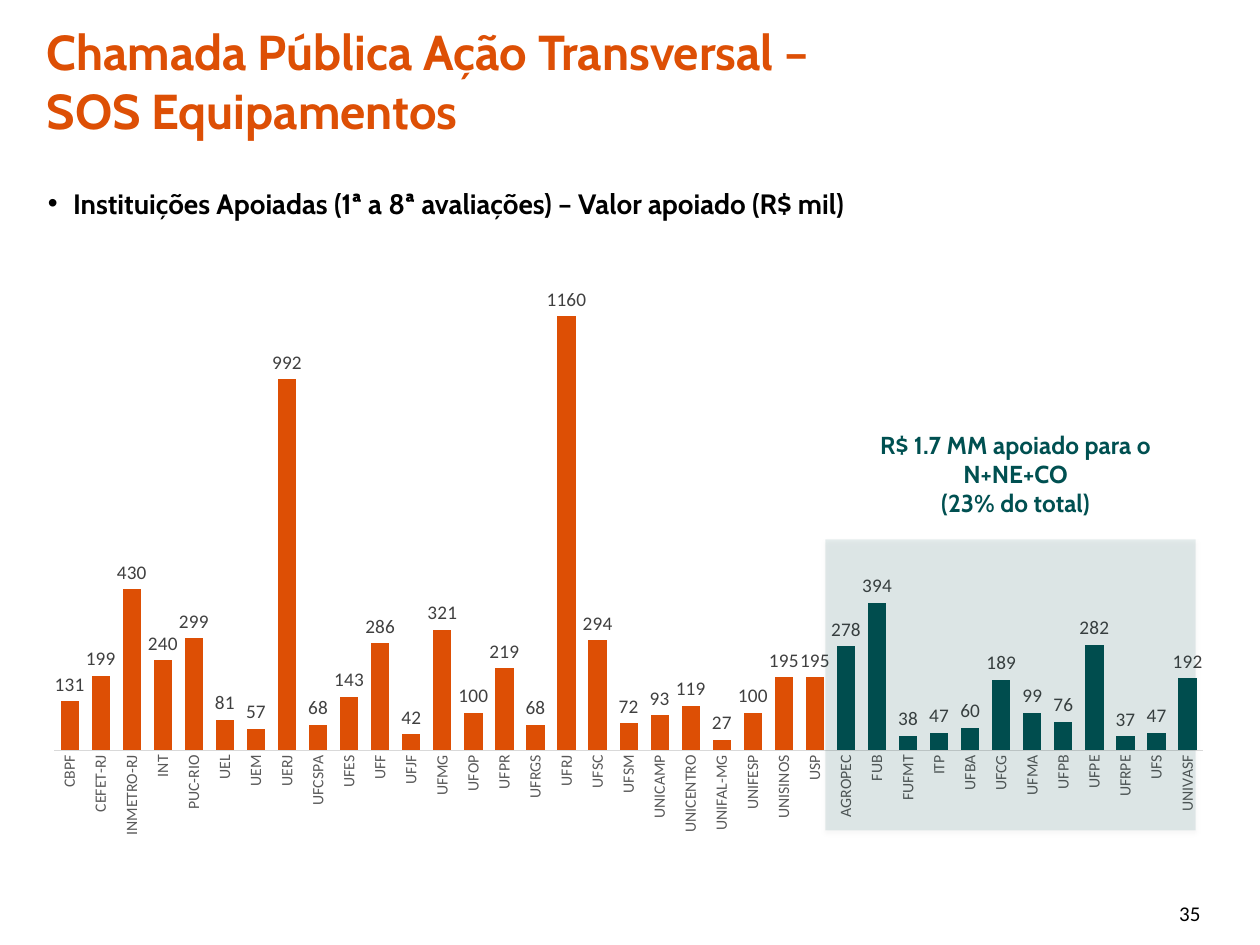
from lxml.etree import SubElement
from pptx import Presentation
from pptx.chart.data import CategoryChartData
from pptx.dml.color import RGBColor
from pptx.enum.chart import XL_CHART_TYPE as ChartType, XL_LABEL_POSITION as LabelPos, XL_TICK_MARK as Tick
from pptx.enum.shapes import MSO_SHAPE as Shape
from pptx.enum.text import MSO_ANCHOR as Anchor, MSO_AUTO_SIZE as AutoSize, PP_ALIGN as Align
from pptx.oxml import parse_xml
from pptx.oxml.ns import nsdecls, qn
from pptx.util import Inches, Pt

ORANGE, TEAL, BLACK = "DD4F05", "005051", "000000"
HEADING, PLAIN = "Cabin", "Calibri"
COLUMNS, ROWS = 100, 75

SOUTH_SOUTHEAST = {
    "CBPF": 131, "CEFET-RJ": 199, "INMETRO-RJ": 430, "INT": 240, "PUC-RIO": 299,
    "UEL": 81, "UEM": 57, "UERJ": 992, "UFCSPA": 68, "UFES": 143, "UFF": 286,
    "UFJF": 42, "UFMG": 321, "UFOP": 100, "UFPR": 219, "UFRGS": 68, "UFRJ": 1160,
    "UFSC": 294, "UFSM": 72, "UNICAMP": 93, "UNICENTRO": 119, "UNIFAL-MG": 27,
    "UNIFESP": 100, "UNISINOS": 195, "USP": 195,
}
OTHER_REGIONS = {
    "AGROPEC": 278, "FUB": 394, "FUFMT": 38, "ITP": 47, "UFBA": 60, "UFCG": 189,
    "UFMA": 99, "UFPB": 76, "UFPE": 282, "UFRPE": 37, "UFS": 47, "UNIVASF": 192,
}


def rgb(hex_code):
    """Turn a hex string into a colour."""
    return RGBColor.from_string(hex_code)


def style_font(font, size, color, name=PLAIN, bold=False):
    """Apply size, colour, typeface and weight to a font."""
    font.size, font.name, font.bold = Pt(size), name, bold
    font.color.rgb = rgb(color)


class SlideBuilder:
    """Holds the deck, the current slide and its grid."""

    def __init__(self):
        """Start a deck with one title and content slide."""
        self.deck = Presentation()
        self.deck.slide_width, self.deck.slide_height = Inches(10), Inches(7.5)
        self.slide = self.deck.slides.add_slide(self.deck.slide_layouts[1])

    def area(self, left, top, width, height):
        """Convert grid columns and rows to lengths."""
        column, row = self.deck.slide_width / COLUMNS, self.deck.slide_height / ROWS
        return [int(n) for n in (left * column, top * row, width * column, height * row)]

    def move(self, holder, box):
        """Move a placeholder to a grid area."""
        holder.left, holder.top, holder.width, holder.height = self.area(*box)
        holder.text_frame.auto_size = AutoSize.NONE

    def add_text_run(self, paragraph, text, align, *style):
        """Add one styled run to an aligned paragraph."""
        paragraph.alignment = align
        run = paragraph.add_run()
        run.text = text
        style_font(run.font, *style)

    def title(self, box, lines):
        """Fill the title placeholder, one run per line."""
        heading = self.slide.shapes.title
        self.move(heading, box)
        heading.text_frame.vertical_anchor = Anchor.MIDDLE
        paragraph = heading.text_frame.paragraphs[0]
        for number, line in enumerate(lines):
            if number:
                paragraph.add_line_break()
            self.add_text_run(paragraph, line, Align.LEFT, 28, ORANGE, HEADING, True)

    def bullet(self, box, text):
        """Fill the body placeholder with one bulleted line."""
        body = self.slide.placeholders[1]
        self.move(body, box)
        paragraph = body.text_frame.paragraphs[0]
        props = paragraph._p.get_or_add_pPr()
        props.set("marL", str(Inches(0.2)))
        props.set("indent", str(-Inches(0.2)))
        SubElement(props, qn("a:buChar"), char="•")
        paragraph.line_spacing, paragraph.space_before = Pt(30), Pt(0)
        self.add_text_run(paragraph, text, Align.JUSTIFY, 16, BLACK, HEADING, True)

    def text(self, box, lines, align, *style, wrap=True):
        """Add a text box with one paragraph per line."""
        frame = self.slide.shapes.add_textbox(*self.area(*box)).text_frame
        frame.word_wrap = wrap
        for number, line in enumerate(lines):
            paragraph = frame.add_paragraph() if number else frame.paragraphs[0]
            self.add_text_run(paragraph, line, align, *style)

    def column_chart(self, box, groups):
        """Add a column chart of thousands, each group in its own colour."""
        data = CategoryChartData()
        bars = [(name, value, color) for color, group in groups for name, value in group.items()]
        data.categories = [name for name, _, _ in bars]
        data.add_series("Valor apoiado", [value * 1000 for _, value, _ in bars])
        chart = self.slide.shapes.add_chart(ChartType.COLUMN_CLUSTERED, *self.area(*box), data).chart
        chart.has_legend = chart.has_title = False
        style_font(chart.font, 10, BLACK)
        plot = chart.plots[0]
        plot.gap_width, plot.vary_by_categories = 70, False
        series = plot.series[0]
        series.format.fill.solid()
        series.format.fill.fore_color.rgb = rgb(groups[0][0])
        for index, (_, _, color) in enumerate(bars):
            if color != groups[0][0]:
                fill = series.points[index].format.fill
                fill.solid()
                fill.fore_color.rgb = rgb(color)
        labels = series.data_labels
        labels.show_value, labels.position = True, LabelPos.OUTSIDE_END
        labels.number_format, labels.number_format_is_linked = "#,", False
        style_font(labels.font, 11, "404040")
        self.axes(chart)
        self.plot_area(chart, x=0.017, y=0, w=0.967, h=0.781)

    def axes(self, chart):
        """Hide the value axis and turn the category names upright."""
        values, names = chart.value_axis, chart.category_axis
        values.visible = values.has_major_gridlines = False
        values.minimum_scale, values.maximum_scale = 0, 1400000
        names.major_tick_mark = names.minor_tick_mark = Tick.NONE
        style_font(names.tick_labels.font, 9, "595959")
        names.format.line.color.rgb = rgb("D9D9D9")
        names.format.line.width = Pt(0.75)
        names._element.find(qn("c:txPr")).find(qn("a:bodyPr")).set("rot", "-5400000")

    def plot_area(self, chart, **shares):
        """Fix the inner plot area as shares of the chart."""
        area = chart._chartSpace.chart.plotArea
        for old in area.findall(qn("c:layout")):
            area.remove(old)
        layout = parse_xml(f"<c:layout {nsdecls('c')}><c:manualLayout/></c:layout>")
        SubElement(layout[0], qn("c:layoutTarget"), val="inner")
        for side in "xy":
            SubElement(layout[0], qn(f"c:{side}Mode"), val="edge")
        for side, share in shares.items():
            SubElement(layout[0], qn(f"c:{side}"), val=str(share))
        area.insert(0, layout)

    def highlight(self, box, color, opacity):
        """Add a translucent rectangle with a soft shadow below."""
        panel = self.slide.shapes.add_shape(Shape.RECTANGLE, *self.area(*box))
        panel.fill.solid()
        panel.fill.fore_color.rgb = rgb(color)
        panel.line.fill.background()
        panel.shadow.inherit = False
        props = panel._element.spPr
        tint = props.find(qn("a:solidFill"))[0]
        SubElement(tint, qn("a:alpha"), val=str(opacity * 1000))
        shadow = SubElement(props.find(qn("a:effectLst")), qn("a:outerShdw"), blurRad=str(Pt(3.1)),
                            dist=str(Pt(1.8)), dir="5400000", rotWithShape="0")
        shade = SubElement(shadow, qn("a:srgbClr"), val=BLACK)
        SubElement(shade, qn("a:alpha"), val="35000")


def main():
    """Build and save the slide."""
    page = SlideBuilder()
    page.text((92.6, 71, 4.8, 3), ["35"], Align.LEFT, 12, BLACK, wrap=False)
    page.title((2.7, 0.1, 97.3, 12.6), ["Chamada Pública Ação Transversal –", "SOS Equipamentos"])
    page.bullet((2.8, 12.8, 94.4, 5.2),
                "Instituições Apoiadas (1ª a 8ª avaliações) – Valor apoiado (R$ mil)")
    page.column_chart((2.7, 18, 94.3, 53.2), [(ORANGE, SOUTH_SOUTHEAST), (TEAL, OTHER_REGIONS)])
    page.highlight((65.5, 42.8, 29.4, 23.1), TEAL, opacity=10)
    page.text((68.7, 33.6, 23.8, 8.1), ["R$ 1.7 MM apoiado para o N+NE+CO", "(23% do total)"],
              Align.CENTER, 14, TEAL, HEADING, True)
    page.deck.save("out.pptx")


if __name__ == "__main__":
    main()
